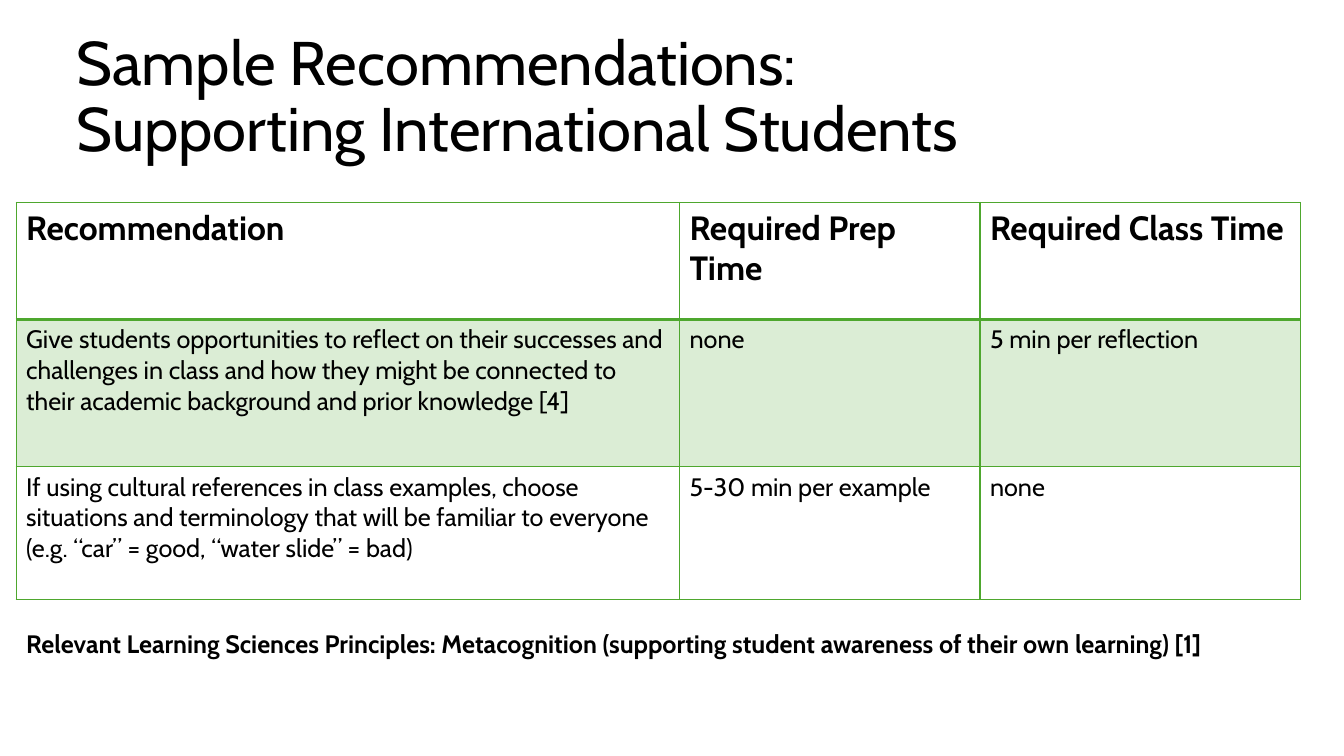
from lxml import etree
from pptx import Presentation
from pptx.dml.color import RGBColor
from pptx.enum.text import MSO_ANCHOR
from pptx.oxml.ns import qn
from pptx.util import Emu, Pt

MIDDLE = MSO_ANCHOR.MIDDLE
PX = 9144  # 100 px to the inch
FONT = "Cabin"
BLACK = "000000"
GREEN = "4EA72E"
COLUMN_WIDTHS = [658, 298, 318]
ROW_HEIGHTS = [116, 146, 132]
ROWS = [
    ["Recommendation", "Required Prep Time", "Required Class Time"],
    ["Give students opportunities to reflect on their successes and challenges in class "
     "and how they might be connected to their academic background and prior knowledge [4]",
     "none", "5 min per reflection"],
    ["If using cultural references in class examples, choose situations and terminology "
     "that will be familiar to everyone (e.g. “car” = good, “water slide” = bad)",
     "5-30 min per example", "none"],
]


def px(length):
    return Emu(length * PX)


def color(hex_string):
    return RGBColor.from_string(hex_string)


def add_span(para, text, size, bold=False):
    span = para.add_run()
    span.text = text
    span.font.name = FONT
    span.font.size = Pt(size)
    span.font.bold = bold
    span.font.color.rgb = color(BLACK)


def add_text(page, box, lines, size, bold=False, anchor=None, spacing=None):
    frame = page.shapes.add_textbox(*map(px, box)).text_frame
    frame.word_wrap = True
    frame.vertical_anchor = anchor
    para = frame.paragraphs[0]
    para.line_spacing = spacing
    for index, line in enumerate(lines):
        if index:
            para.add_line_break()
        add_span(para, line, size, bold)


def add_borders(cell, bottom_width):
    properties = cell._tc.get_or_add_tcPr()
    widths = {"a:lnL": 1, "a:lnR": 1, "a:lnT": 1, "a:lnB": bottom_width}
    for position, (tag, width) in enumerate(widths.items()):
        line = etree.Element(qn(tag), w=str(Pt(width)))
        fill = etree.SubElement(line, qn("a:solidFill"))
        etree.SubElement(fill, qn("a:srgbClr"), val=GREEN)
        properties.insert(position, line)


def fill_cell(cell, shaded):
    if not shaded:
        cell.fill.background()
        return
    cell.fill.solid()
    cell.fill.fore_color.rgb = color(GREEN)
    tint = cell._tc.tcPr.find(".//" + qn("a:srgbClr"))
    etree.SubElement(tint, qn("a:alpha"), val="20000")


def add_recommendations(page, left, top):
    box = (left, top, sum(COLUMN_WIDTHS), sum(ROW_HEIGHTS))
    table = page.shapes.add_table(len(ROWS), len(COLUMN_WIDTHS), *map(px, box)).table
    table.first_row = False
    table.horz_banding = False
    for column, width in zip(table.columns, COLUMN_WIDTHS):
        column.width = px(width)
    for index, (row, height, texts) in enumerate(zip(table.rows, ROW_HEIGHTS, ROWS)):
        row.height = px(height)
        header = index == 0
        for cell, text in zip(row.cells, texts):
            add_span(cell.text_frame.paragraphs[0], text, 24 if header else 18, header)
            fill_cell(cell, shaded=index % 2 == 1)
            add_borders(cell, bottom_width=2 if header else 1)


def main():
    deck = Presentation()
    deck.slide_width, deck.slide_height = px(1333), px(750)
    page = deck.slides.add_slide(deck.slide_layouts[6])
    add_text(page, (66, 25, 1150, 145),
             ["Sample Recommendations: ", "Supporting International Students"],
             44, anchor=MIDDLE, spacing=0.9)
    add_recommendations(page, 16, 201)
    add_text(page, (16, 618, 1265, 40),
             ["Relevant Learning Sciences Principles: Metacognition "
              "(supporting student awareness of their own learning) [1]"],
             18, bold=True)
    deck.save("out.pptx")


if __name__ == "__main__":
    main()
